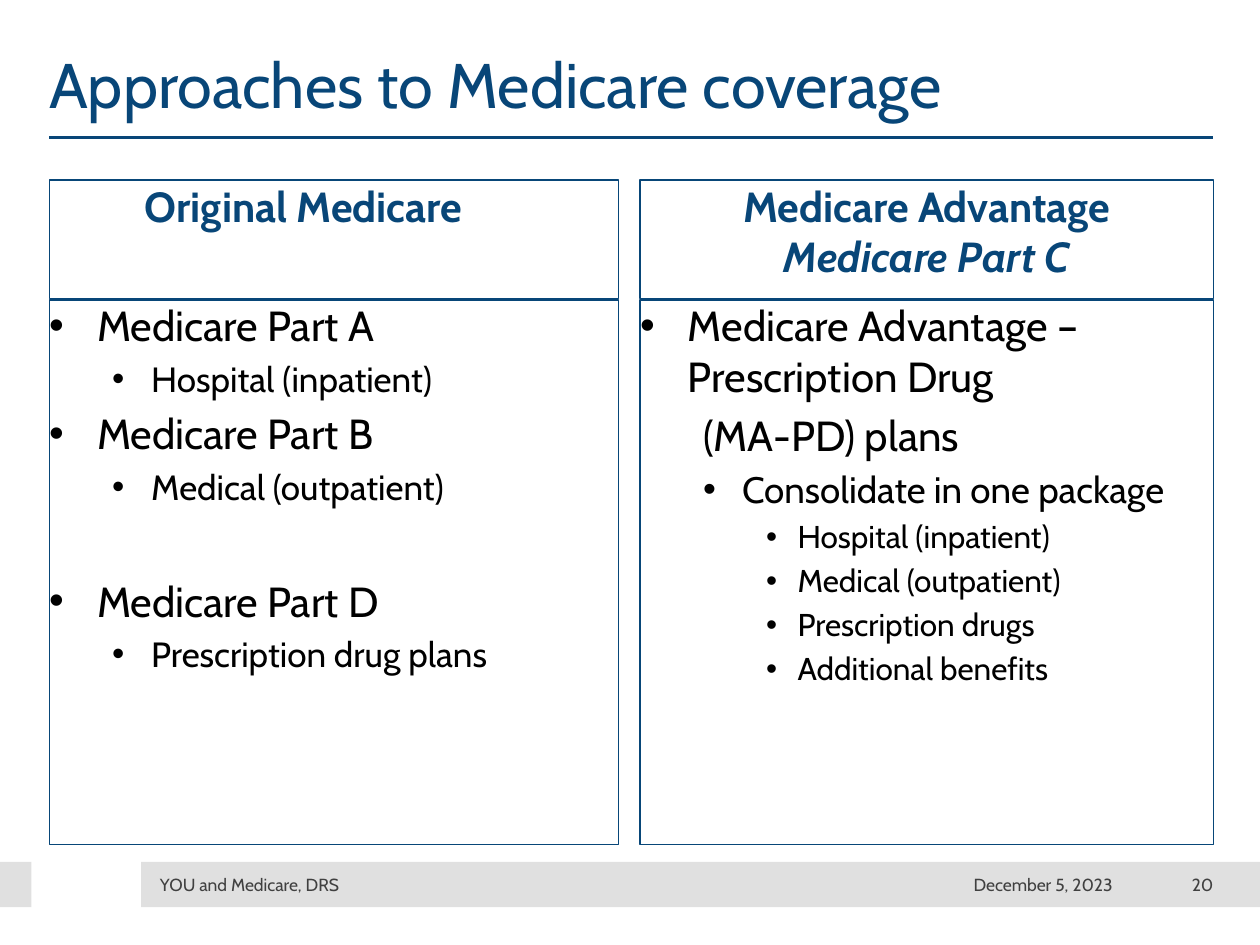
from lxml import etree
from pptx import Presentation
from pptx.dml.color import RGBColor
from pptx.enum import shapes, text
from pptx.oxml.ns import qn
from pptx.util import Inches, Pt

HUES = {"navy": "084678", "band": "E0E0E0", "ink": "000000", "gray": "404040"}
LEFT, RIGHT = text.PP_ALIGN.LEFT, text.PP_ALIGN.RIGHT
MID = text.PP_ALIGN.CENTER

INDENTS = {"main": (0, 0.38, -0.38), "sub": (1, 0.81, -0.31),
           "deep": (2, 1.25, -0.25), "plain": (1, 0.5, 0)}
GAP = 38.9

PANELS = [
    (0.39, 4.52, [("Original Medicare\t", False)], [
        ("main", 24, "Medicare Part A"),
        ("sub", 20, "Hospital (inpatient)"),
        ("main", 24, "Medicare Part B"),
        ("sub", 20, "Medical (outpatient)"),
        ("main", 24, "Medicare Part D", GAP),
        ("sub", 20, "Prescription drug plans")]),
    (5.08, 4.55, [("Medicare Advantage", False), ("Medicare Part C", True)], [
        ("main", 24, "Medicare Advantage – Prescription Drug"),
        ("plain", 24, "(MA-PD) plans"),
        ("sub", 21, "Consolidate in one package"),
        ("deep", 18, "Hospital (inpatient)"),
        ("deep", 18, "Medical (outpatient)"),
        ("deep", 18, "Prescription drugs"),
        ("deep", 18, "Additional benefits")]),
]

FOOTER = [(1.27, 3.96, LEFT, "YOU and Medicare, DRS"),
          (6.5, 2.33, RIGHT, "December 5, 2023"),
          (8.93, 0.7, RIGHT, "20")]


def hue(name):
    return RGBColor.from_string(HUES[name])


def apply(item, values):
    for key, value in values.items():
        setattr(item, key, value)


class Deck:
    def __init__(self, width, height, font):
        self.show = Presentation()
        apply(self.show, {"slide_width": Inches(width), "slide_height": Inches(height)})
        self.slide = self.show.slides.add_slide(self.show.slide_layouts[6])
        self.font = font

    def frame(self, shape, anchor=text.MSO_ANCHOR.TOP):
        apply(shape.text_frame, {
            "word_wrap": True, "vertical_anchor": anchor, "margin_left": 0,
            "margin_right": 0, "margin_top": 0, "margin_bottom": 0})
        return shape.text_frame

    def words(self, para, phrase, size, color, **more):
        run = para.add_run()
        run.text = phrase
        apply(run.font, {"name": self.font, "size": Pt(size), **more})
        run.font.color.rgb = hue(color)

    def rect(self, box, fill=None, line=None):
        shape = self.slide.shapes.add_shape(
            shapes.MSO_SHAPE.RECTANGLE, *map(Inches, box))
        shape.shadow.inherit = False
        if fill:
            shape.fill.solid()
            shape.fill.fore_color.rgb = hue(fill)
        else:
            shape.fill.background()
        if line:
            shape.line.color.rgb = hue(line)
            shape.line.width = Pt(0.75)
        else:
            shape.line.fill.background()
        return shape

    def rule(self, start, end, color, width):
        line = self.slide.shapes.add_connector(
            shapes.MSO_CONNECTOR.STRAIGHT, *map(Inches, start + end))
        line.line.color.rgb = hue(color)
        line.line.width = Pt(width)
        etree.SubElement(line._element.spPr, qn("a:effectLst"))

    def label(self, box, phrase, size, color, align=LEFT, anchor=text.MSO_ANCHOR.TOP):
        shape = self.slide.shapes.add_textbox(*map(Inches, box))
        para = self.frame(shape, anchor).paragraphs[0]
        para.alignment = align
        self.words(para, phrase, size, color)

    def header(self, box, lines):
        para = self.frame(self.rect(box, line="navy")).paragraphs[0]
        para.alignment = MID
        for spot, (phrase, slant) in enumerate(lines):
            if spot:
                para.add_line_break()
            self.words(para, phrase, 24, "navy", bold=True, italic=slant)

    def bullets(self, box, items):
        frame = self.frame(self.rect(box, line="navy"))
        for spot, (kind, size, phrase, *gap) in enumerate(items):
            para = frame.add_paragraph() if spot else frame.paragraphs[0]
            level, left, hang = INDENTS[kind]
            before = gap[0] if gap else size * 0.2
            apply(para, {"alignment": LEFT, "level": level,
                         "space_before": Pt(before if spot else 0)})
            props = para._p.get_or_add_pPr()
            props.set("marL", str(Inches(left)))
            props.set("indent", str(Inches(hang)))
            if hang:
                etree.SubElement(props, qn("a:buFont"), typeface="Arial")
                etree.SubElement(props, qn("a:buChar"), char="•")
            else:
                etree.SubElement(props, qn("a:buNone"))
            self.words(para, phrase, size, "ink")


def main():
    deck = Deck(10, 7.5, "Cabin")
    for left, width in [(1.12, 8.88), (0, 0.25)]:
        deck.rect((left, 6.84, width, 0.36), fill="band")
    deck.rule((0.39, 1.09), (9.63, 1.09), "navy", 2)
    deck.label((0.39, 0.36, 9.24, 0.73), "Approaches to Medicare coverage", 36, "navy")
    for left, width, lines, items in PANELS:
        deck.header((left, 1.43, width, 0.94), lines)
        deck.bullets((left, 2.38, width, 4.32), items)
    for left, width, align, phrase in FOOTER:
        deck.label((left, 6.91, width, 0.22), phrase, 10, "gray", align,
                   text.MSO_ANCHOR.MIDDLE)
    deck.show.save("out.pptx")


if __name__ == "__main__":
    main()
